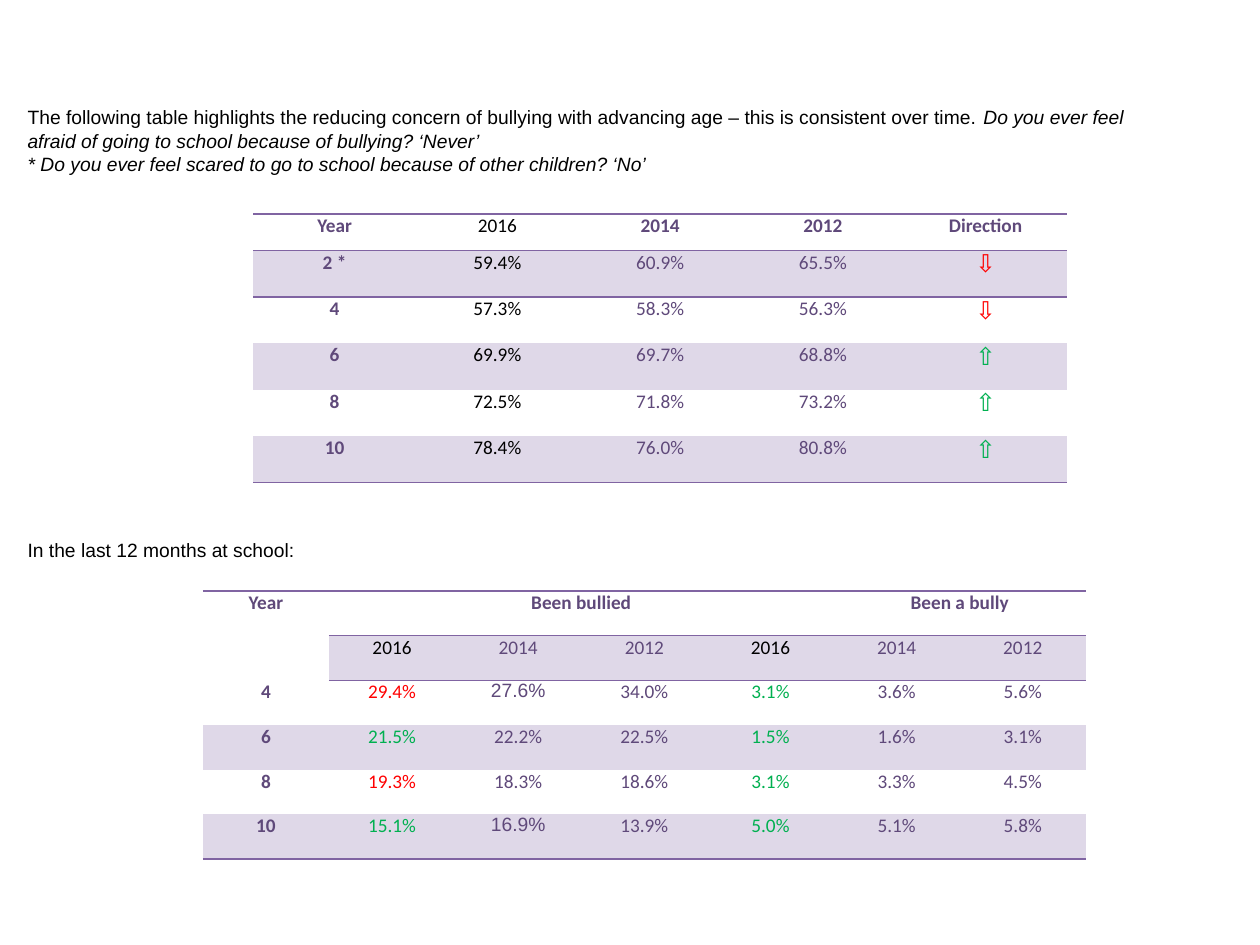
from lxml.etree import SubElement
from pptx import Presentation
from pptx.dml.color import RGBColor
from pptx.enum.text import MSO_ANCHOR, PP_ALIGN
from pptx.oxml.ns import qn
from pptx.util import Inches, Pt

PURPLE, LINE, BAND = "5F497A", "8064A2", "DFD8E8"
BLACK, RED, GREEN = "000000", "FF0000", "00B050"
NO_STYLE = "{2D5ABB26-0587-4C30-8999-92F81FD0307C}"

FEELING_SAFE = [
    ("2 *", 59.4, 60.9, 65.5),
    ("4", 57.3, 58.3, 56.3),
    ("6", 69.9, 69.7, 68.8),
    ("8", 72.5, 71.8, 73.2),
    ("10", 78.4, 76.0, 80.8),
]
BULLYING = [
    ("4", (29.4, 27.6, 34.0), (3.1, 3.6, 5.6)),
    ("6", (21.5, 22.2, 22.5), (1.5, 1.6, 3.1)),
    ("8", (19.3, 18.3, 18.6), (3.1, 3.3, 4.5)),
    ("10", (15.1, 16.9, 13.9), (5.0, 5.1, 5.8)),
]
ARIAL_VALUES = (27.6, 16.9)


def rgb(color):
    return RGBColor.from_string(color)


def add_span(para, text, color=BLACK, font="Arial", size=11, bold=False, italic=False):
    span = para.add_run()
    span.text = text
    span.font.name, span.font.size = font, Pt(size)
    span.font.bold, span.font.italic = bold, italic
    span.font.color.rgb = rgb(color)


def add_text(page, left, top, width, height, paragraphs):
    """Each paragraph is a list of (text, italic) spans."""
    box = page.shapes.add_textbox(Inches(left), Inches(top), Inches(width), Inches(height))
    frame = box.text_frame
    frame.word_wrap = True
    frame.vertical_anchor = MSO_ANCHOR.TOP
    for index, spans in enumerate(paragraphs):
        para = frame.add_paragraph() if index else frame.paragraphs[0]
        for text, italic in spans:
            add_span(para, text, italic=italic)


def add_border(cell, side):
    line = SubElement(cell._tc.get_or_add_tcPr(), qn(f"a:ln{side}"), w=str(Pt(1)))
    fill = SubElement(line, qn("a:solidFill"))
    SubElement(fill, qn("a:srgbClr"), val=LINE)


def add_plain_table(page, left, top, width, heights, column_count, banded_rows):
    """Unstyled table ruled at the top, under the first row and at the bottom."""
    last = len(heights) - 1
    table = page.shapes.add_table(
        len(heights), column_count, Inches(left), Inches(top), Inches(width), Inches(sum(heights))
    ).table
    table.first_row = table.horz_banding = False
    table._tbl.tblPr.find(qn("a:tableStyleId")).text = NO_STYLE
    for column in table.columns:
        column.width = Inches(width / column_count)
    for index, height in enumerate(heights):
        table.rows[index].height = Inches(height)
        for cell in table.rows[index].cells:
            cell.margin_left = cell.margin_right = Inches(0.07)
            cell.margin_top = cell.margin_bottom = 0
            if index in (0, 1):
                add_border(cell, "T")
            if index in (0, last):
                add_border(cell, "B")
            if index in banded_rows:
                cell.fill.solid()
                cell.fill.fore_color.rgb = rgb(BAND)
            else:
                cell.fill.background()
    return table


def write(cell, text, color=PURPLE, font="Calibri", size=11, bold=False):
    para = cell.text_frame.paragraphs[0]
    para.alignment = PP_ALIGN.CENTER
    add_span(para, text, color, font, size, bold)


def add_safety_table(page, left, top, width, height):
    header = 0.29
    row_height = (height - header) / len(FEELING_SAFE)
    heights = [header] + [row_height] * len(FEELING_SAFE)
    table = add_plain_table(page, left, top, width, heights, 5, (1, 3, 5))
    for column, text in enumerate(("Year", "2016", "2014", "2012", "Direction")):
        current = text == "2016"
        write(table.cell(0, column), text, BLACK if current else PURPLE, bold=not current)
    for row, (year, *values) in enumerate(FEELING_SAFE, 1):
        write(table.cell(row, 0), year, bold=True)
        for column, value in enumerate(values, 1):
            write(table.cell(row, column), f"{value:.1f}%", BLACK if column == 1 else PURPLE)
        arrow, color = ("⇧", GREEN) if values[0] > values[1] else ("⇩", RED)
        write(table.cell(row, 4), arrow, color, "Arial", 14)


def add_bullying_table(page, left, top, width, height):
    row_count = len(BULLYING) + 2
    heights = [height / row_count] * row_count
    table = add_plain_table(page, left, top, width, heights, 7, (1, 3, 5))
    year_cell = table.cell(0, 0)
    year_cell.merge(table.cell(1, 0))
    for properties in (year_cell._tc.tcPr, table.cell(1, 0)._tc.tcPr):
        for side in ("B",) if properties is year_cell._tc.tcPr else ("T",):
            properties.remove(properties.find(qn(f"a:ln{side}")))
    write(year_cell, "Year", bold=True)
    for column, text in ((2, "Been bullied"), (5, "Been a bully")):
        table.cell(0, column).merge(table.cell(0, column + 1))
        write(table.cell(0, column), text, bold=True)
    for column, text in enumerate(("2016", "2014", "2012") * 2, 1):
        write(table.cell(1, column), text, BLACK if text == "2016" else PURPLE)
    for row, (year, *groups) in enumerate(BULLYING, 2):
        write(table.cell(row, 0), year, bold=True)
        for first, values in zip((1, 4), groups):
            trend = GREEN if values[0] < values[1] else RED
            for offset, value in enumerate(values):
                font = "Arial" if value in ARIAL_VALUES else "Calibri"
                color = PURPLE if offset else trend
                write(table.cell(row, first + offset), f"{value:.1f}%", color, font)


def main():
    deck = Presentation()
    deck.slide_width, deck.slide_height = Inches(10), Inches(7.5)
    page = deck.slides.add_slide(deck.slide_layouts[6])
    add_safety_table(page, 2.01, 1.7, 6.46, 2.13)
    add_bullying_table(page, 1.61, 4.69, 7.01, 2.13)
    add_text(page, 0.12, 0.79, 9.29, 0.96, [
        [
            ("The following table highlights the reducing concern of bullying with "
             "advancing age – this is consistent over time. ", False),
            ("Do you ever feel afraid of going to school because of bullying? ‘Never’", True),
        ],
        [("* Do you ever feel scared to go to school because of other children? ‘No’", True)],
    ])
    add_text(page, 0.12, 4.22, 9.29, 0.59, [[("In the last 12 months at school:", False)]])
    deck.save("out.pptx")


if __name__ == "__main__":
    main()
